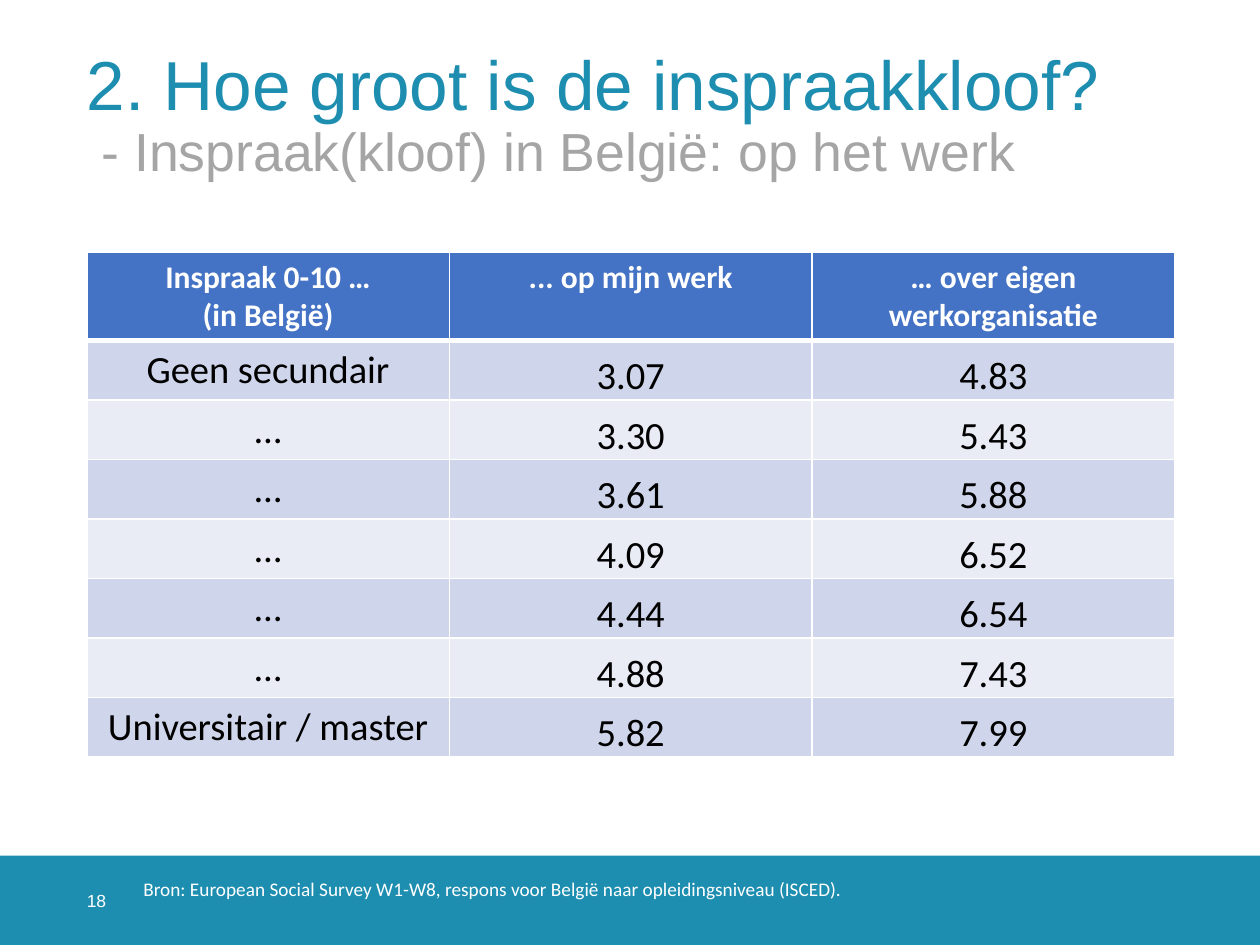
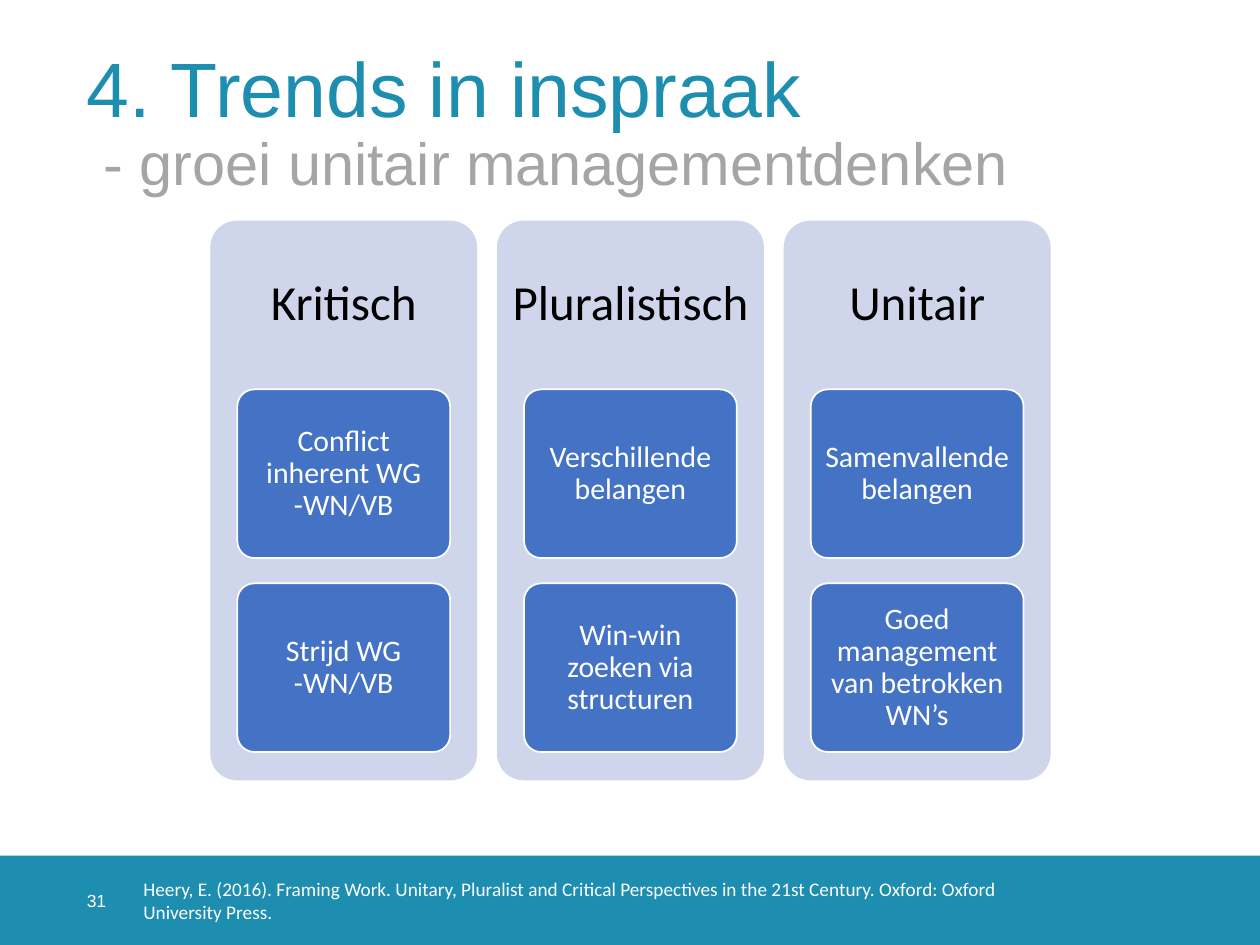
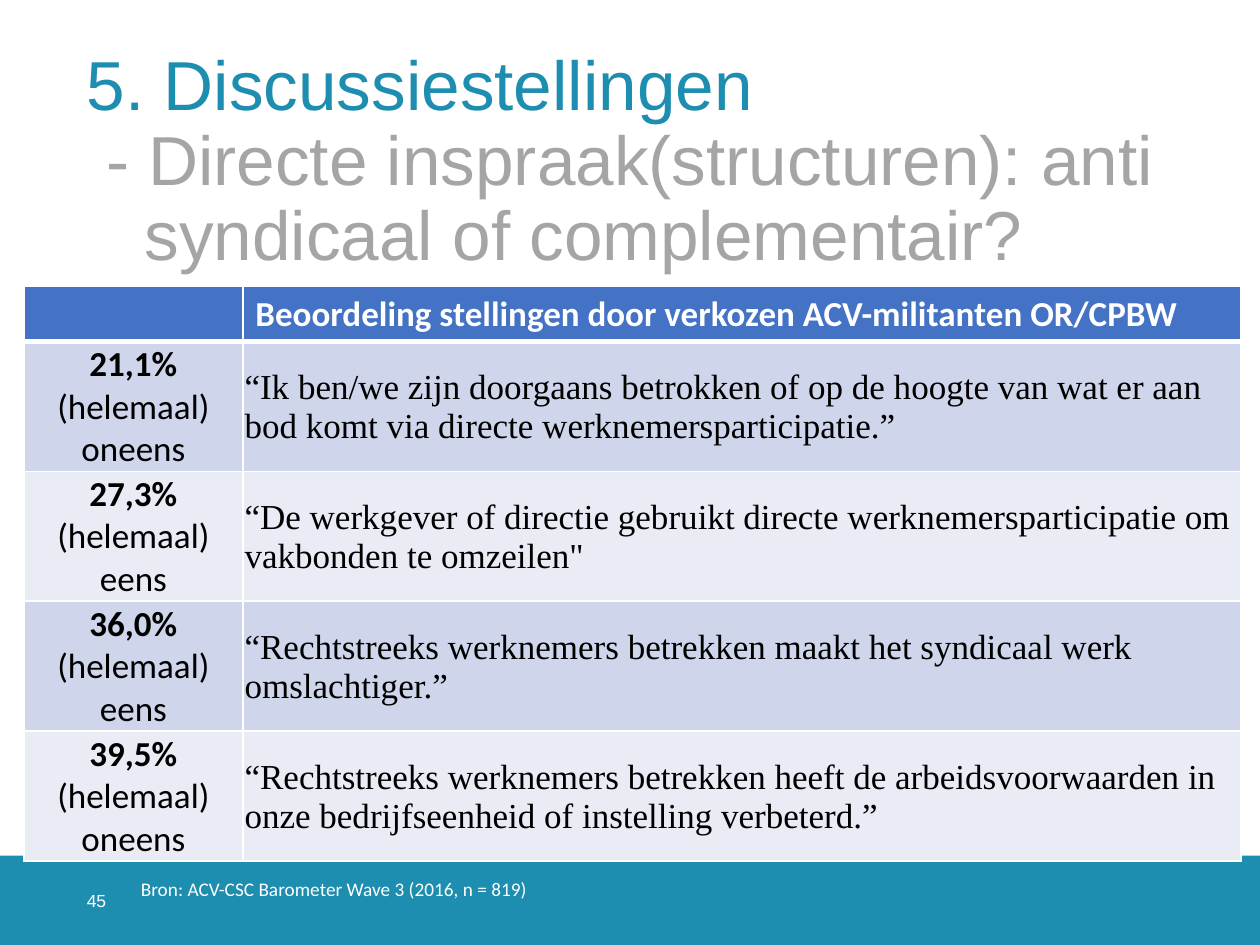
from dataclasses import dataclass
from typing import Any, NamedTuple

from lxml.etree import SubElement
from pptx import Presentation
from pptx.dml.color import RGBColor
from pptx.enum.shapes import MSO_SHAPE
from pptx.enum.text import MSO_ANCHOR, PP_ALIGN
from pptx.oxml.ns import qn
from pptx.util import Cm, Pt

TEAL, GREY, WHITE, BLACK = "1D8DB0", "A5A5A5", "FFFFFF", "000000"
BLUE, LIGHT_BLUE, PALE_BLUE = "4472C4", "CFD5EA", "E9EBF5"
ARIAL, CALIBRI, TIMES = "Arial", "Calibri", "Times New Roman"

SLIDE_WIDTH, SLIDE_HEIGHT = 25.4, 19.05
BAND_TOP, BAND_HEIGHT = 17.25, 1.8
LEFT_MARGIN, CONTENT_WIDTH = 1.75, 21.89
ARIAL_SPACE = 0.278  # width of a space, in ems


class Box(NamedTuple):
    """Place and size in centimetres."""
    left: float
    top: float
    width: float
    height: float

    def lengths(self) -> list[Cm]:
        return [Cm(value) for value in self]


class Margins(NamedTuple):
    """Text insets in centimetres."""
    left: float = 0.25
    top: float = 0.13
    right: float = 0.25
    bottom: float = 0.13


NO_MARGINS = Margins(0, 0, 0, 0)
TIGHT_MARGINS = Margins(0.03, 0.03, 0.03, 0)


@dataclass(frozen=True)
class Run:
    text: str
    size: float
    font: str = CALIBRI
    colour: str = WHITE
    bold: bool = False


@dataclass(frozen=True)
class TableCell:
    paragraphs: list[list[Run]]
    fill: str
    alignment: PP_ALIGN = PP_ALIGN.CENTER
    anchor: MSO_ANCHOR = MSO_ANCHOR.TOP
    margins: Margins = Margins()
    bottom_border: float = 1


@dataclass(frozen=True)
class Frame:
    """The parts that each slide has: title, subtitle, number and source."""
    title: str
    subtitle: str
    title_size: float
    subtitle_size: float
    number: str
    source: str
    source_left: float = 2.64


def colour(value: str) -> RGBColor:
    return RGBColor.from_string(value)


def set_format(target: Any, values: dict[str, Any]) -> None:
    for name, value in values.items():
        setattr(target, name, value)


def set_margins(target: Any, margins: Margins) -> None:
    set_format(target, {f"margin_{side}": Cm(value) for side, value in margins._asdict().items()})


def write_text(text_frame: Any, paragraphs: list[list[Run]],
               alignment: PP_ALIGN = PP_ALIGN.LEFT, line_spacing: float = 1.0) -> None:
    for index, runs in enumerate(paragraphs):
        paragraph = text_frame.add_paragraph() if index else text_frame.paragraphs[0]
        set_format(paragraph, {"alignment": alignment, "line_spacing": line_spacing})
        for part in runs:
            run = paragraph.add_run()
            run.text = part.text
            set_format(run.font, {"size": Pt(part.size), "name": part.font, "bold": part.bold})
            run.font.color.rgb = colour(part.colour)


def prepare_frame(shape: Any, margins: Margins, anchor: MSO_ANCHOR) -> Any:
    text_frame = shape.text_frame
    set_margins(text_frame, margins)
    set_format(text_frame, {"word_wrap": True, "vertical_anchor": anchor})
    return text_frame


def add_text(slide: Any, box: Box, paragraphs: list[list[Run]], margins: Margins = Margins(),
             anchor: MSO_ANCHOR = MSO_ANCHOR.TOP, alignment: PP_ALIGN = PP_ALIGN.LEFT,
             line_spacing: float = 1.0) -> Any:
    text_frame = prepare_frame(slide.shapes.add_textbox(*box.lengths()), margins, anchor)
    write_text(text_frame, paragraphs, alignment, line_spacing)
    return text_frame


def add_block(slide: Any, kind: MSO_SHAPE, box: Box, fill: str, line: str | None = None) -> Any:
    shape = slide.shapes.add_shape(kind, *box.lengths())
    shape.shadow.inherit = False
    shape.fill.solid()
    shape.fill.fore_color.rgb = colour(fill)
    if line:
        shape.line.color.rgb = colour(line)
        shape.line.width = Pt(1)
    else:
        shape.line.fill.background()
    if kind == MSO_SHAPE.ROUNDED_RECTANGLE:
        shape.adjustments[0] = 0.1
    return shape


def add_frame(presentation: Any, frame: Frame) -> Any:
    """Add a slide with its band, title, number and source."""
    slide = presentation.slides.add_slide(presentation.slide_layouts[6])
    add_block(slide, MSO_SHAPE.RECTANGLE, Box(0, BAND_TOP, SLIDE_WIDTH, BAND_HEIGHT), TEAL)
    title = add_text(
        slide, Box(LEFT_MARGIN, 1.02, CONTENT_WIDTH, 3.68),
        [[Run(frame.title, frame.title_size, ARIAL, TEAL)],
         [Run(frame.subtitle, frame.subtitle_size, ARIAL, GREY)]],
        NO_MARGINS, line_spacing=0.9)
    space = ARIAL_SPACE * frame.subtitle_size
    subtitle_properties = title.paragraphs[1]._p.get_or_add_pPr()
    subtitle_properties.set("marL", str(Pt(3 * space)))
    subtitle_properties.set("indent", str(Pt(-2 * space)))
    add_text(slide, Box(LEFT_MARGIN, BAND_TOP, 1.8, BAND_HEIGHT),
             [[Run(frame.number, 10, ARIAL)]], NO_MARGINS, MSO_ANCHOR.MIDDLE)
    add_text(slide, Box(frame.source_left, 17.55, 17.9, 0.74), [[Run(frame.source, 11)]])
    return slide


def add_cell_borders(cell: Any, bottom_width: float) -> None:
    properties = cell._tc.get_or_add_tcPr()
    for side, width in {"L": 1, "R": 1, "T": 1, "B": bottom_width}.items():
        line = SubElement(properties, qn(f"a:ln{side}"), w=str(Pt(width)))
        SubElement(SubElement(line, qn("a:solidFill")), qn("a:srgbClr"), val=WHITE)


def add_grid(slide: Any, left: float, top: float, widths: list[float],
             heights: list[float], rows: list[list[TableCell]]) -> None:
    box = Box(left, top, sum(widths), sum(heights))
    table = slide.shapes.add_table(len(rows), len(widths), *box.lengths()).table
    for column, width in zip(table.columns, widths):
        column.width = Cm(width)
    for row, height, contents in zip(table.rows, heights, rows):
        row.height = Cm(height)
        for cell, content in zip(row.cells, contents):
            add_cell_borders(cell, content.bottom_border)
            cell.fill.solid()
            cell.fill.fore_color.rgb = colour(content.fill)
            cell.vertical_anchor = content.anchor
            set_margins(cell, content.margins)
            write_text(cell.text_frame, content.paragraphs, content.alignment)


def header_cell(lines: list[str], size: float, alignment: PP_ALIGN = PP_ALIGN.CENTER) -> TableCell:
    paragraphs = [[Run(line, size, bold=True)] for line in lines]
    return TableCell(paragraphs, BLUE, alignment, bottom_border=3)


def band_fill(index: int) -> str:
    return PALE_BLUE if index % 2 else LIGHT_BLUE


def add_voice_slide(presentation: Any) -> None:
    slide = add_frame(presentation, Frame(
        "2. Hoe groot is de inspraakkloof?", "- Inspraak(kloof) in België: op het werk",
        39.6, 30.6, "18",
        "Bron: European Social Survey W1-W8, respons voor België naar opleidingsniveau (ISCED)."))
    scores = [
        ("Geen secundair", "3.07", "4.83"),
        ("…", "3.30", "5.43"),
        ("…", "3.61", "5.88"),
        ("…", "4.09", "6.52"),
        ("…", "4.44", "6.54"),
        ("…", "4.88", "7.43"),
        ("Universitair / master", "5.82", "7.99"),
    ]
    headers = [["Inspraak 0-10 …", "(in België)"], ["... op mijn werk"],
               ["… over eigen werkorganisatie"]]
    rows = [[header_cell(lines, 18) for lines in headers]]
    for index, (level, *values) in enumerate(scores):
        fill = band_fill(index)
        rows.append([TableCell([[Run(level, 22, colour=BLACK)]], fill)] + [
            TableCell([[Run(value, 22, colour=BLACK)]], fill,
                      anchor=MSO_ANCHOR.BOTTOM, margins=TIGHT_MARGINS)
            for value in values])
    add_grid(slide, LEFT_MARGIN, 5.08, [7.31] * 3, [1.78] + [1.2] * len(scores), rows)


def add_trends_slide(presentation: Any) -> None:
    slide = add_frame(presentation, Frame(
        "4. Trends in inspraak", "- groei unitair managementdenken", 44, 34, "31",
        "Heery, E. (2016). Framing Work. Unitary, Pluralist and Critical Perspectives "
        "in the 21st Century. Oxford: Oxford University Press."))
    perspectives = {
        "Kritisch": ["Conflict inherent WG -WN/VB", "Strijd WG -WN/VB"],
        "Pluralistisch": ["Verschillende belangen", "Win-win zoeken via structuren"],
        "Unitair": ["Samenvallende belangen", "Goed management van betrokken WN’s"],
    }
    column_width, card_width = 5.38, 4.29
    for column, (heading, cards) in enumerate(perspectives.items()):
        left = 4.24 + column * 5.78
        add_block(slide, MSO_SHAPE.ROUNDED_RECTANGLE,
                  Box(left, 4.45, column_width, 11.28), LIGHT_BLUE)
        add_text(slide, Box(left, 4.45, column_width, 3.38), [[Run(heading, 28, colour=BLACK)]],
                 Margins(0.3, 0.3, 0.3, 0.3), MSO_ANCHOR.MIDDLE, PP_ALIGN.CENTER, 0.9)
        for row, text in enumerate(cards):
            card_left = left + (column_width - card_width) / 2
            card = add_block(slide, MSO_SHAPE.ROUNDED_RECTANGLE,
                             Box(card_left, 7.85 + row * 3.91, card_width, 3.4), BLUE, WHITE)
            text_frame = prepare_frame(card, Margins(0.13, 0.1, 0.13, 0.1), MSO_ANCHOR.MIDDLE)
            write_text(text_frame, [[Run(text, 17)]], PP_ALIGN.CENTER, 0.9)


def add_discussion_slide(presentation: Any) -> None:
    slide = add_frame(presentation, Frame(
        "5. Discussiestellingen",
        "- Directe inspraak(structuren): anti syndicaal of complementair?",
        39.6, 39.6, "45", "Bron: ACV-CSC Barometer Wave 3 (2016, n = 819)", 2.59))
    statements = [
        ("21,1%", "oneens", "“Ik ben/we zijn doorgaans betrokken of op de hoogte van wat er aan "
                            "bod komt via directe werknemersparticipatie.”"),
        ("27,3%", "eens", "“De werkgever of directie gebruikt directe werknemersparticipatie om "
                          "vakbonden te omzeilen\""),
        ("36,0%", "eens", "“Rechtstreeks werknemers betrekken maakt het syndicaal werk "
                          "omslachtiger.”"),
        ("39,5%", "oneens", "“Rechtstreeks werknemers betrekken heeft de arbeidsvoorwaarden in "
                            "onze bedrijfseenheid of instelling verbeterd.”"),
    ]
    heading = "Beoordeling stellingen door verkozen ACV-militanten OR/CPBW"
    rows = [[header_cell([], 20), header_cell([heading], 20, PP_ALIGN.LEFT)]]
    for index, (share, opinion, statement) in enumerate(statements):
        answer = [Run(share, 20, colour=BLACK, bold=True),
                  Run(f" (helemaal) {opinion}", 20, colour=BLACK)]
        quote = [Run(statement, 20, TIMES, BLACK)]
        rows.append([
            TableCell([runs], band_fill(index), alignment, MSO_ANCHOR.MIDDLE, TIGHT_MARGINS)
            for runs, alignment in ((answer, PP_ALIGN.CENTER), (quote, PP_ALIGN.LEFT))])
    add_grid(slide, 0.48, 5.77, [4.42, 20.12], [1.11] + [2.62] * len(statements), rows)


def main() -> None:
    presentation = Presentation()
    set_format(presentation, {"slide_width": Cm(SLIDE_WIDTH), "slide_height": Cm(SLIDE_HEIGHT)})
    add_voice_slide(presentation)
    add_trends_slide(presentation)
    add_discussion_slide(presentation)
    presentation.save("out.pptx")


if __name__ == "__main__":
    main()
